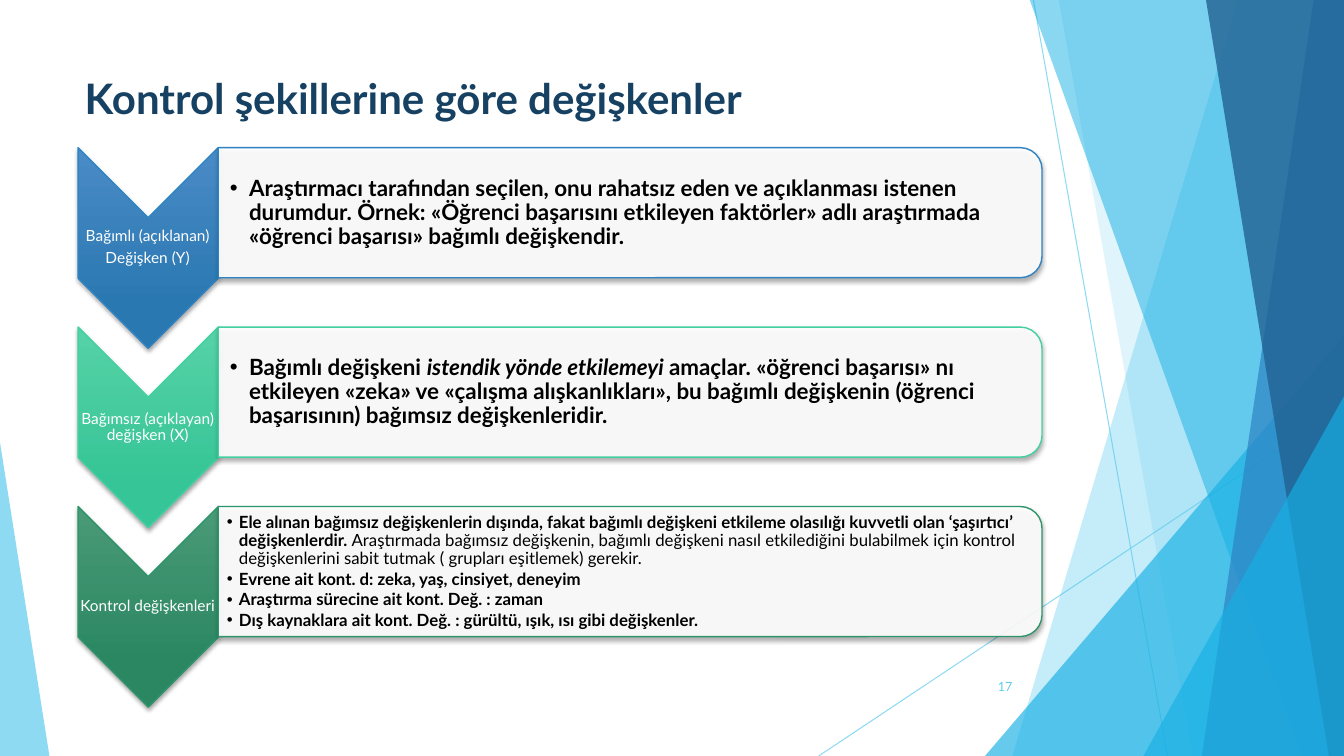
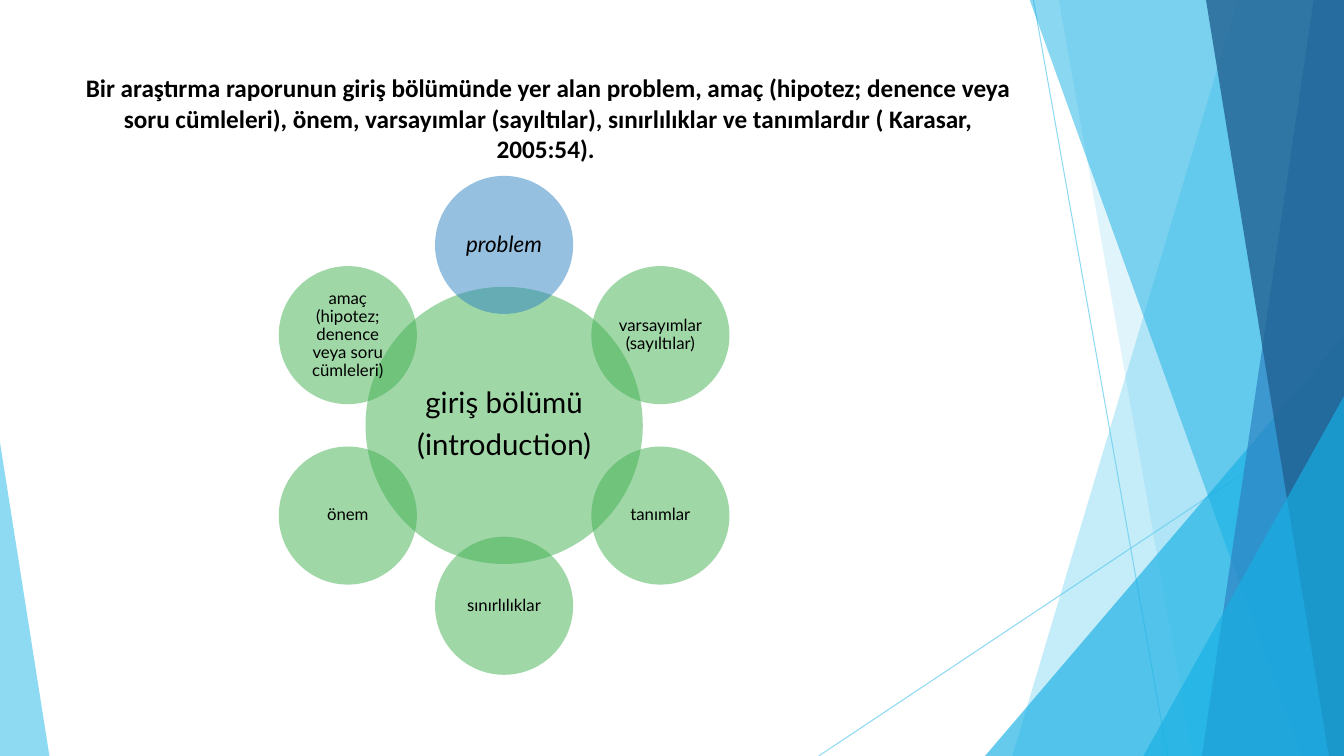
from dataclasses import dataclass
from math import cos, radians, sin

from lxml.etree import SubElement
from pptx import Presentation
from pptx.dml.color import RGBColor
from pptx.enum.shapes import MSO_CONNECTOR, MSO_SHAPE
from pptx.enum.text import MSO_ANCHOR, MSO_AUTO_SIZE, PP_ALIGN
from pptx.oxml.ns import qn
from pptx.util import Inches, Pt

WIDE, HIGH = 13.33, 7.5


@dataclass(frozen=True)
class Theme:
    sky: str = "5FCBEF"
    cyan: str = "17B0E4"
    blue: str = "2E83C3"
    deep: str = "226292"
    navy: str = "174162"
    green: str = "42B051"
    white: str = "FFFFFF"
    black: str = "000000"
    font: str = "Lato"
    plain: str = "Calibri"
    title: int = 30
    hub: int = 21
    lead: int = 18
    body: int = 16
    small: int = 12
    label: int = 11
    page: int = 9


T = Theme()


@dataclass(frozen=True)
class Run:
    text: str
    bold: bool = False
    slant: bool = False


@dataclass(frozen=True)
class Style:
    size: int
    color: str = T.black
    font: str = T.font
    align: PP_ALIGN = PP_ALIGN.CENTER
    line: float = 0.9
    after: float = 0.35
    indent: float = 0


@dataclass(frozen=True)
class Wedge:
    top: float
    base: float
    color: str
    alpha: int


@dataclass(frozen=True)
class Peak:
    left: float
    top: float
    width: float
    tip: float
    color: str
    alpha: int


@dataclass(frozen=True)
class Step:
    label: list
    items: list
    light: str
    dark: str
    edge: str
    size: int
    indent: float
    inset: float


@dataclass(frozen=True)
class Disc:
    lines: list
    size: int = T.small
    color: str = T.green


LINES = [(10.25, 0, 11.58, HIGH), (WIDE, 4.03, 8.12, HIGH)]
DECOR = [
    Wedge(12.28, 10.04, T.sky, 36),
    Wedge(10.5, 11.83, T.sky, 20),
    Peak(9.77, 3.33, 3.56, 1, T.cyan, 66),
    Wedge(10.21, 12.91, T.cyan, 50),
    Wedge(13.03, 11.92, T.blue, 70),
    Wedge(11.96, 13.18, T.deep, 80),
    Peak(11.34, 3.93, 1.99, 1, T.cyan, 66),
    Peak(0, 4.39, 0.49, 0, T.sky, 70),
]

STEPS = [
    Step([[Run("Bağımlı (açıklanan)")], [Run("Değişken (Y)")]],
         [[Run("Araştırmacı tarafından seçilen, onu rahatsız eden ve açıklanması istenen durumdur. "
               "Örnek: «Öğrenci başarısını etkileyen faktörler» adlı araştırmada «öğrenci başarısı» "
               "bağımlı değişkendir.", True)]],
         "4A8BC6", "2A78B2", T.blue, T.body, 0.19, 0.12),
    Step([[Run("Bağımsız (açıklayan) değişken (X)")]],
         [[Run("Bağımlı değişkeni ", True), Run("istendik yönde etkilemeyi ", True, True),
           Run("amaçlar. «öğrenci başarısı» nı etkileyen «zeka» ve «çalışma alışkanlıkları», "
               "bu bağımlı değişkenin (öğrenci başarısının) bağımsız değişkenleridir.", True)]],
         "56D2A7", "36C596", "42D0A2", T.body, 0.19, 0.12),
    Step([[Run("Kontrol değişkenleri")]],
         [[Run("Ele alınan bağımsız değişkenlerin dışında, fakat bağımlı değişkeni etkileme "
               "olasılığı kuvvetli olan ‘şaşırtıcı’ değişkenlerdir. ", True),
           Run("Araştırmada bağımsız değişkenin, bağımlı değişkeni nasıl etkilediğini bulabilmek "
               "için kontrol değişkenlerini sabit tutmak ( grupları eşitlemek) gerekir.")],
          [Run("Evrene ait kont. d: zeka, yaş, cinsiyet, deneyim", True)],
          [Run("Araştırma sürecine ait kont. Değ. : zaman", True)],
          [Run("Dış kaynaklara ait kont. Değ. : gürültü, ışık, ısı gibi değişkenler.", True)]],
         "4A9A76", "2A8762", "2E946B", T.small, 0.12, 0.09),
]

HUB = Disc([[Run("giriş bölümü")], [Run("(introduction)")]], T.hub)
RING = [
    Disc([[Run("problem", slant=True)]], T.body, T.blue),
    Disc([[Run("varsayımlar (sayıltılar)")]]),
    Disc([[Run("tanımlar")]]),
    Disc([[Run("sınırlılıklar")]]),
    Disc([[Run("önem")]]),
    Disc([[Run("amaç (hipotez; denence veya soru cümleleri)")]]),
]


def rgb(code: str) -> RGBColor:
    return RGBColor.from_string(code)


def place(shape, left: float, top: float, width: float, height: float) -> None:
    shape.left, shape.top = Inches(left), Inches(top)
    shape.width, shape.height = Inches(width), Inches(height)


def fade(shape, alpha: int) -> None:
    color = shape._element.spPr.find(f".//{qn('a:srgbClr')}")
    SubElement(color, qn("a:alpha"), val=str(alpha * 1000))


def paint(shape, color: str, alpha: int) -> None:
    shape.shadow.inherit = False
    shape.fill.solid()
    shape.fill.fore_color.rgb = rgb(color)
    fade(shape, alpha)
    shape.line.fill.background()


def edge(shape, color: str) -> None:
    shape.line.color.rgb = rgb(color)
    shape.line.width = Pt(1)
    shape.shadow.inherit = False
    glow = SubElement(shape._element.spPr.find(qn("a:effectLst")), qn("a:outerShdw"),
                      blurRad=str(Pt(3)), dist=str(Pt(2)), dir="5400000", rotWithShape="0")
    tone = SubElement(glow, qn("a:srgbClr"), val=T.black)
    SubElement(tone, qn("a:alpha"), val="35000")


def write(frame, lines: list, style: Style) -> None:
    for i, runs in enumerate(lines):
        para = frame.add_paragraph() if i else frame.paragraphs[0]
        para.alignment = style.align
        para.line_spacing = style.line
        para.space_before = Pt(0)
        para.space_after = Pt(round(style.size * style.after, 1))
        if style.indent:
            props = para._p.get_or_add_pPr()
            props.set("marL", str(Inches(style.indent)))
            props.set("indent", str(-Inches(style.indent)))
            SubElement(props, qn("a:buChar"), char="•")
        for part in runs:
            run = para.add_run()
            run.text = part.text
            font = run.font
            font.name, font.size = style.font, Pt(style.size)
            font.bold, font.italic = part.bold, part.slant
            font.color.rgb = rgb(style.color)


def setup(frame, inset: float, left: float | None = None) -> None:
    frame.word_wrap = True
    frame.auto_size = MSO_AUTO_SIZE.NONE
    frame.vertical_anchor = MSO_ANCHOR.MIDDLE
    frame.margin_left = Inches(inset if left is None else left)
    frame.margin_top = frame.margin_right = frame.margin_bottom = Inches(inset)


def draw_wedge(slide, item: Wedge) -> None:
    pen = slide.shapes.build_freeform(Inches(item.top), Inches(-0.01))
    ends = [(WIDE, -0.01), (WIDE, HIGH), (item.base, HIGH)]
    pen.add_line_segments([(Inches(x), Inches(y)) for x, y in ends])
    paint(pen.convert_to_shape(), item.color, item.alpha)


def draw_peak(slide, item: Peak) -> None:
    shape = slide.shapes.add_shape(MSO_SHAPE.ISOSCELES_TRIANGLE, Inches(item.left), Inches(item.top),
                                   Inches(item.width), Inches(HIGH - item.top))
    shape.adjustments[0] = item.tip
    paint(shape, item.color, item.alpha)


def draw_back(slide) -> None:
    for ends in LINES:
        line = slide.shapes.add_connector(MSO_CONNECTOR.STRAIGHT, *map(Inches, ends))
        line.line.color.rgb = rgb(T.sky)
        line.line.width = Pt(0.75)
        fade(line, 70)
        SubElement(line._element.spPr, qn("a:effectLst"))
    for item in DECOR:
        draw = draw_wedge if isinstance(item, Wedge) else draw_peak
        draw(slide, item)


def start(deck, layout: int, title: str, style: Style):
    slide = deck.slides.add_slide(deck.slide_layouts[layout])
    draw_back(slide)
    head = slide.shapes.title
    place(head, 0.74, 0.67, 9.4, 1.44)
    head.text_frame.auto_size = MSO_AUTO_SIZE.NONE
    head.text_frame.vertical_anchor = MSO_ANCHOR.TOP
    write(head.text_frame, [[Run(title, True)]], style)
    return slide


def turned(slide, kind: MSO_SHAPE, x: float, y: float, width: float, height: float):
    shape = slide.shapes.add_shape(kind, Inches(x - width / 2), Inches(y - height / 2),
                                   Inches(width), Inches(height))
    shape.rotation = 90
    return shape


def draw_step(slide, step: Step, body, drop: float) -> None:
    arrow = turned(slide, MSO_SHAPE.CHEVRON, 1.47, 2.46 + drop, 1.99, 1.39)
    arrow.fill.gradient()
    arrow.fill.gradient_angle = 270
    for stop, color, spot in zip(arrow.fill.gradient_stops, (step.light, step.dark), (0, 0.78)):
        stop.color.rgb = rgb(color)
        stop.position = spot
    arrow._element.spPr.find(qn("a:gradFill")).set("rotWithShape", "0")
    edge(arrow, step.edge)

    label = slide.shapes.add_textbox(Inches(0.77), Inches(2.16 + drop), Inches(1.39), Inches(0.6))
    setup(label.text_frame, 0.01)
    write(label.text_frame, step.label, Style(T.label, T.white))

    panel = turned(slide, MSO_SHAPE.ROUND_2_SAME_RECTANGLE, 6.25, 2.11 + drop, 1.29, 8.17)
    paint(panel, T.white, 90)
    edge(panel, step.edge)

    place(body, 2.16, 1.53 + drop, 8.11, 1.17)
    setup(body.text_frame, 0.01, step.inset)
    write(body.text_frame, step.items,
          Style(step.size, align=PP_ALIGN.LEFT, after=0.15, indent=step.indent))
    slide.shapes._spTree.append(body._element)


def draw_disc(slide, disc: Disc, x: float, y: float, size: float, inset: float) -> None:
    shape = slide.shapes.add_shape(MSO_SHAPE.OVAL, Inches(x - size / 2), Inches(y - size / 2),
                                   Inches(size), Inches(size))
    paint(shape, disc.color, 50)
    setup(shape.text_frame, inset)
    write(shape.text_frame, disc.lines, Style(disc.size))


def add_steps(deck) -> None:
    slide = start(deck, 4, "Kontrol şekillerine göre değişkenler",
                  Style(T.title, T.navy, align=PP_ALIGN.LEFT, line=1, after=0))
    *bodies, spare = list(slide.placeholders)[1:]
    spare._element.getparent().remove(spare._element)
    for i, (step, body) in enumerate(zip(STEPS, bodies)):
        draw_step(slide, step, body, i * 1.78)
    page = slide.shapes.add_textbox(Inches(9.39), Inches(6.61), Inches(0.75), Inches(0.4))
    setup(page.text_frame, 0.05, 0.1)
    page.text_frame.margin_right = Inches(0.1)
    write(page.text_frame, [[Run("17")]],
          Style(T.page, T.sky, align=PP_ALIGN.RIGHT, line=1, after=0))


def add_ring(deck) -> None:
    slide = start(deck, 5, "Bir araştırma raporunun giriş bölümünde yer alan problem, amaç "
                  "(hipotez; denence veya soru cümleleri), önem, varsayımlar (sayıltılar), "
                  "sınırlılıklar ve tanımlardır ( Karasar, 2005:54). ",
                  Style(T.lead, font=T.plain, line=1, after=0))
    x, y, reach = 5, 4.22, 1.79
    draw_disc(slide, HUB, x, y, 2.75, 0.03)
    for i, disc in enumerate(RING):
        turn = radians(i * 360 / len(RING))
        draw_disc(slide, disc, x + reach * sin(turn), y - reach * cos(turn), 1.37, 0.02)


def main() -> None:
    deck = Presentation()
    deck.slide_width, deck.slide_height = Inches(WIDE), Inches(HIGH)
    add_steps(deck)
    add_ring(deck)
    deck.save("out.pptx")


if __name__ == "__main__":
    main()
